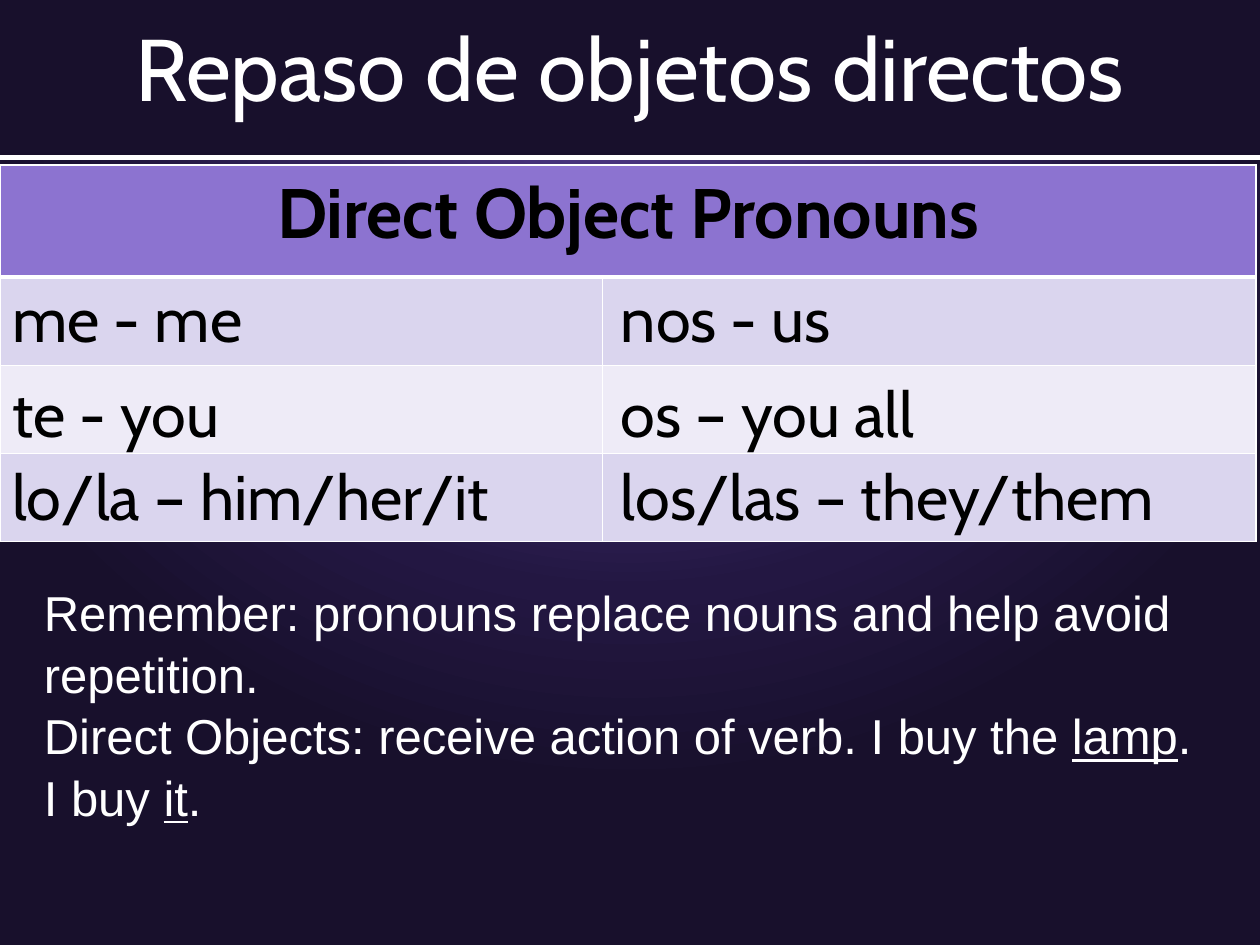
from pptx import Presentation
from pptx.dml.color import RGBColor
from pptx.enum.shapes import MSO_CONNECTOR, MSO_SHAPE
from pptx.enum.text import MSO_ANCHOR, MSO_AUTO_SIZE, PP_ALIGN
from pptx.oxml import parse_xml
from pptx.oxml.ns import nsdecls
from pptx.util import Inches, Pt

STRAIGHT = MSO_CONNECTOR.STRAIGHT
RECTANGLE = MSO_SHAPE.RECTANGLE
MIDDLE = MSO_ANCHOR.MIDDLE
GROW = MSO_AUTO_SIZE.SHAPE_TO_FIT_TEXT
CENTER = PP_ALIGN.CENTER

COLORS = {
    "white": "FFFFFF", "black": "000000", "night": "18102C",
    "plum": "231742", "glow": "7152C2", "header": "8C73D0",
    "band": "DAD5EE", "pale": "EEEBF7",
}
PRONOUNS = [
    ("me - me", "nos - us"),
    ("te - you", "os – you all"),
    ("lo/la – him/her/it", "los/las – they/them"),
]
LABEL_WIDTHS = [(2.25, 1.93), (2.25, 4.52), (4.52, 4.92)]
LABEL_TOPS = [2.17, 2.92, 3.58]
NOTES = [
    [("Remember: pronouns replace nouns and help avoid repetition.", False)],
    [("Direct Objects: receive action of verb. I buy the ", False),
     ("lamp", True), (". I buy ", False), ("it", True), (".", False)],
]


def rgb(name):
    """Return the named colour."""
    return RGBColor.from_string(COLORS[name])


def style(r, size, font, color, bold=None):
    """Format one run."""
    r.font.size, r.font.name, r.font.bold = Pt(size), font, bold
    r.font.color.rgb = rgb(color)


def add_text_box(s, x, y, w, h):
    """Add a wrapping text box and return its text frame."""
    tf = s.shapes.add_textbox(Inches(x), Inches(y), Inches(w), Inches(h)).text_frame
    tf.word_wrap = True
    tf.auto_size = GROW
    return tf


def set_background(s):
    """Give the slide a radial glow centred above its top edge."""
    stops = "".join(
        f'<a:gs pos="{pos * 1000}"><a:srgbClr val="{COLORS[name]}"/></a:gs>'
        for pos, name in [(0, "glow"), (75, "plum"), (100, "night")])
    s.element.cSld.insert(0, parse_xml(
        f'<p:bg {nsdecls("p", "a")}><p:bgPr><a:gradFill rotWithShape="1">'
        f'<a:gsLst>{stops}</a:gsLst><a:path path="circle"><a:fillToRect '
        'l="50000" t="-80000" r="50000" b="180000"/></a:path></a:gradFill>'
        '<a:effectLst/></p:bgPr></p:bg>'))


def add_title_band(s, x, y, w, h):
    """Place the dark band, the title on it and the rule below."""
    band = s.shapes.add_shape(RECTANGLE, Inches(x), Inches(y), Inches(w), Inches(h))
    band.shadow.inherit = False
    band.fill.solid()
    band.fill.fore_color.rgb = rgb("night")
    band.line.fill.background()

    title = s.shapes.title
    band.element.addnext(title.element)
    title.left, title.top = Inches(x), Inches(y)
    title.width, title.height = Inches(w), Inches(1.06)
    tf = title.text_frame
    tf.text = "Repaso de objetos directos"
    tf.vertical_anchor = MIDDLE
    p = tf.paragraphs[0]
    p.alignment = CENTER
    style(p.runs[0], 50, "Cabin", "white")

    rule = s.shapes.add_connector(
        STRAIGHT, Inches(x), Inches(y + h), Inches(x + w), Inches(y + h))
    rule.line.color.rgb = rgb("white")
    rule.line.width = Pt(3)
    rule.element.spPr.append(parse_xml(
        f'<a:effectLst {nsdecls("a")}><a:outerShdw blurRad="{Pt(3.1)}" '
        f'dist="{Pt(1.6)}" dir="5400000" rotWithShape="0"><a:srgbClr '
        f'val="{COLORS["black"]}"><a:alpha val="38000"/></a:srgbClr>'
        '</a:outerShdw></a:effectLst>'))


def format_cell(cell, fill, top=1, bottom=1):
    """Fill a cell and draw its white borders, widths in points."""
    cell.fill.solid()
    cell.fill.fore_color.rgb = rgb(fill)
    tcPr = cell._tc.get_or_add_tcPr()
    for i, (side, width) in enumerate(
            [("L", 1), ("R", 1), ("T", top), ("B", bottom)]):
        tcPr.insert(i, parse_xml(
            f'<a:ln{side} {nsdecls("a")} w="{Pt(width)}"><a:solidFill>'
            f'<a:srgbClr val="{COLORS["white"]}"/></a:solidFill></a:ln{side}>'))


def add_pronoun_table(s, x, y, w, h):
    """Place the pronoun table with its labels laid over the cells."""
    table = s.shapes.add_table(
        4, 2, Inches(x), Inches(y), Inches(w), Inches(h)).table
    table.columns[0].width = Inches(4.78)
    table.columns[1].width = Inches(w - 4.78)
    header_height = 0.89
    for i, row in enumerate(table.rows):
        row.height = Inches((h - header_height) / 3 if i else header_height)
        fill = "header" if i == 0 else "band" if i % 2 else "pale"
        for cell in row.cells:
            format_cell(cell, fill, 3 if i == 1 else 1, 1 if i else 3)

    header = table.cell(0, 0)
    header.merge(table.cell(0, 1))
    header.text_frame.text = "Direct Object Pronouns"
    p = header.text_frame.paragraphs[0]
    p.alignment = CENTER
    style(p.runs[0], 40, "Cabin", "black", True)

    for words, widths, top in zip(PRONOUNS, LABEL_WIDTHS, LABEL_TOPS):
        for word, width, left in zip(words, widths, (x, x + 4.83)):
            tf = add_text_box(s, left, top, width, 0.71)
            tf.text = word
            style(tf.paragraphs[0].runs[0], 36, "Cabin", "black")


def add_notes_text(s, x, y, w, h):
    """Place the reminder with its underlined examples."""
    tf = add_text_box(s, x, y, w, h)
    for i, parts in enumerate(NOTES):
        p = tf.add_paragraph() if i else tf.paragraphs[0]
        p.line_spacing = 1.05
        for text, underlined in parts:
            r = p.add_run()
            r.text = text
            style(r, 28, "Arial", "white")
            r.font.underline = underlined


def main():
    """Build and save the slide."""
    prs = Presentation()
    prs.slide_width, prs.slide_height = Inches(10), Inches(7.5)
    s = prs.slides.add_slide(prs.slide_layouts[5])
    set_background(s)
    add_title_band(s, 0, 0, 10, 1.25)
    add_pronoun_table(s, 0, 1.31, 9.97, 2.99)
    add_notes_text(s, 0.25, 4.55, 9.5, 1.99)
    prs.save("out.pptx")


if __name__ == "__main__":
    main()
